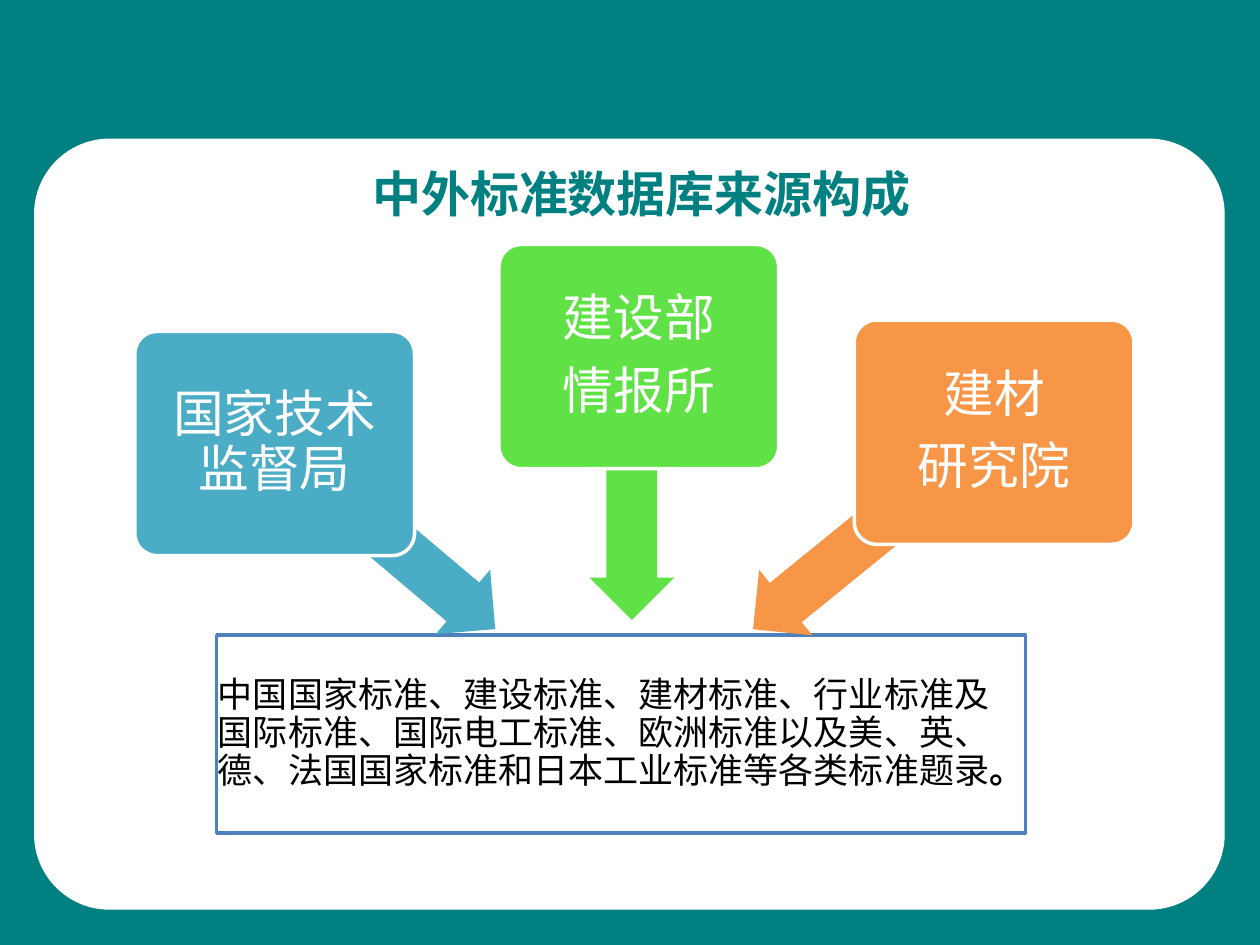
from lxml.etree import SubElement
from pptx import Presentation
from pptx.dml.color import RGBColor
from pptx.enum.shapes import MSO_SHAPE
from pptx.enum.text import MSO_ANCHOR, PP_ALIGN
from pptx.oxml.ns import qn
from pptx.util import Inches, Pt

FONT = "Noto Sans CJK SC"
HUES = {
    "teal": "008080", "white": "FFFFFF", "black": "000000", "edge": "4F81BD",
    "blue": "4BACC6", "green": "60E146", "orange": "F79646",
}
UNIT = 0.1  # grid of 100 columns by 75 rows


def hue(name):
    return RGBColor.from_string(HUES[name])


def grid(*cells):
    return [Inches(cell * UNIT) for cell in cells]


def write(frame, paras, size, color, bold=False, align=PP_ALIGN.LEFT,
          anchor=MSO_ANCHOR.MIDDLE, inset=0.6, lead=None, after=0):
    """Fill a frame; each paragraph is a list of (text, bold) runs or a string."""
    frame.word_wrap = True
    frame.vertical_anchor = anchor
    if inset is not None:
        side, = grid(inset)
        frame.margin_left = frame.margin_right = side
        frame.margin_top = frame.margin_bottom = side
    for i, runs in enumerate(paras):
        para = frame.add_paragraph() if i else frame.paragraphs[0]
        para.alignment = align
        para.space_before = Pt(0)
        para.space_after = Pt(after)
        if lead:
            para.line_spacing = lead
        if isinstance(runs, str):
            runs = [(runs, bold)]
        for text, heavy in runs:
            run = para.add_run()
            run.text = text
            font = run.font
            font.size, font.bold, font.name = Pt(size), heavy, FONT
            font.color.rgb = hue(color)
            SubElement(run._r.get_or_add_rPr(), qn("a:ea"), typeface=FONT)


class Deck:
    def __init__(self):
        self.show = Presentation()
        self.show.slide_width, self.show.slide_height = grid(100, 75)
        self.page = self.show.slides.add_slide(self.show.slide_layouts[5])
        back = self.page.background.fill
        back.solid()
        back.fore_color.rgb = hue("teal")

    def shape(self, kind, box, fill, line=None, adj=(), turn=0):
        item = self.page.shapes.add_shape(kind, *grid(*box))
        item.shadow.inherit = False
        item.fill.solid()
        item.fill.fore_color.rgb = hue(fill)
        if line:
            item.line.color.rgb = hue(line)
            item.line.width = Pt(2)
        else:
            item.line.fill.background()
        for i, value in enumerate(adj):
            item.adjustments[i] = value
        item.rotation = turn
        return item

    def title(self, text, box):
        item = self.page.shapes.title
        item.left, item.top, item.width, item.height = grid(*box)
        # Keep the title above the card
        self.page.shapes._spTree.append(item._element)
        write(item.text_frame, [text], 28, "teal", bold=True, inset=None,
              align=PP_ALIGN.CENTER, anchor=MSO_ANCHOR.TOP)

    def arrow(self, box, fill, turn):
        self.shape(MSO_SHAPE.LEFT_ARROW, box, fill, adj=(0.6, 0.5), turn=turn)

    def source(self, left, top, fill, paras):
        item = self.shape(MSO_SHAPE.ROUNDED_RECTANGLE, (left, top, 22.2, 17.8),
                          fill, line="white", adj=(0.1,))
        write(item.text_frame, paras, 29, "white", align=PP_ALIGN.CENTER,
              lead=0.9, after=10)

    def panel(self, box, paras):
        item = self.shape(MSO_SHAPE.RECTANGLE, box, "white", line="edge")
        write(item.text_frame, paras, 20, "black", inset=0.1, lead=0.9, after=7)


def main():
    deck = Deck()

    # White card and title
    deck.shape(MSO_SHAPE.ROUNDED_RECTANGLE, (2.7, 11, 94.5, 61.2), "white",
               adj=(0.098,))
    deck.title("中外标准数据库来源构成", (5.9, 12.5, 90, 8.5))

    # Contents of the database
    deck.panel((17.2, 50.4, 64.2, 15.7), [[
        ("中国国家标准、建设标准、建材标准、行业标准及国际标准、国际电工标准、"
         "欧洲标准以及美、英、德、法国国家标准和日本工业标准等各类标准题录", False),
        ("。", True)]])

    # Sources, each with its arrow to the contents
    parts = [
        ("blue", (10.7, 26.3), ["国家技术监督局"], (19.1, 39.2, 22.9, 6.7), 220.1),
        ("green", (39.6, 19.4), ["建设部", "情报所"], (39.7, 35.4, 20.9, 6.7), 270),
        ("orange", (67.8, 25.4), ["建材", "研究院"], (57, 38.8, 24.7, 6.7), 320.9),
    ]
    for fill, spot, paras, box, turn in parts:
        deck.arrow(box, fill, turn)
        deck.source(*spot, fill, paras)

    deck.show.save("out.pptx")


if __name__ == "__main__":
    main()
